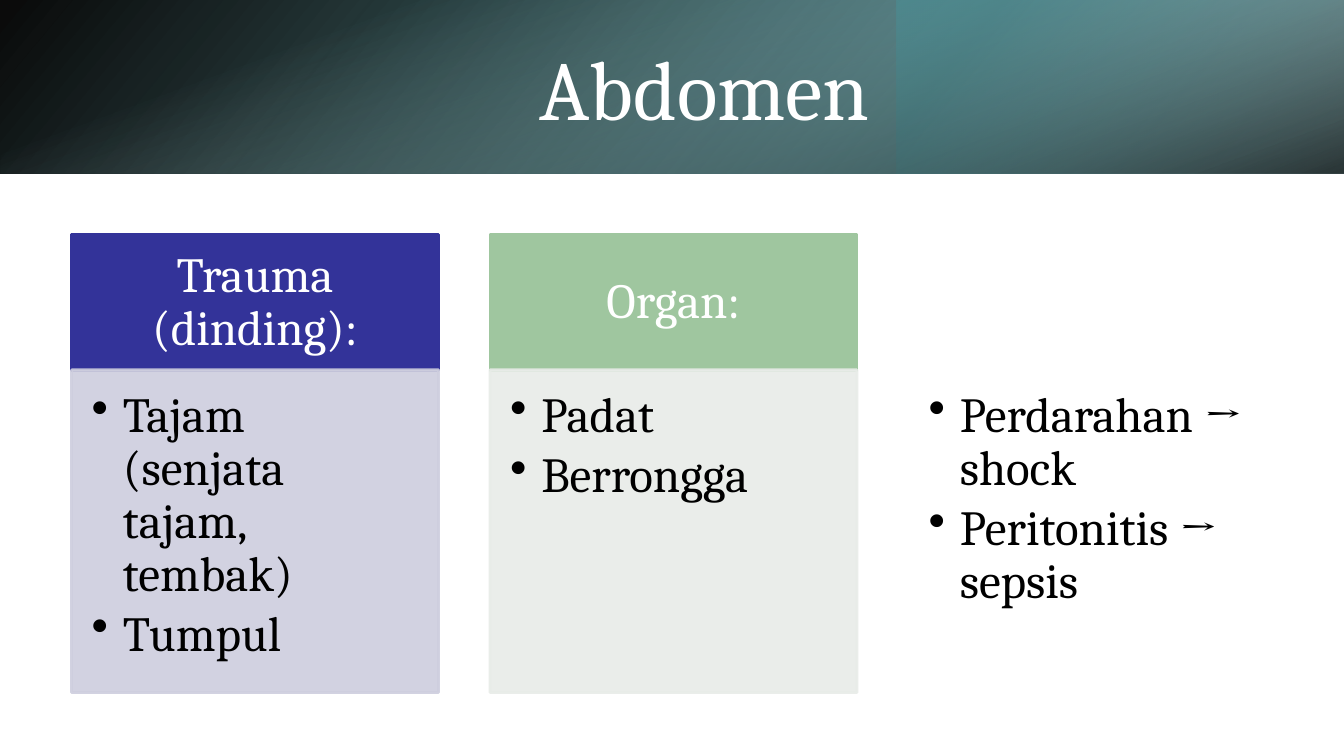
from pptx import Presentation
from pptx.dml.color import RGBColor
from pptx.enum.shapes import MSO_SHAPE
from pptx.enum.text import MSO_ANCHOR as Anchor, PP_ALIGN as Align
from pptx.oxml import parse_xml
from pptx.oxml.ns import nsdecls, qn
from pptx.util import Inches, Pt
from lxml.etree import SubElement

WIDTH, HEIGHT, BANNER = 13.33, 7.5, 1.72


def color(value):
    return RGBColor.from_string(value)


class Deck:
    font = "Cambria"
    size = 35

    def __init__(self):
        self.prs = Presentation()
        self.prs.slide_width, self.prs.slide_height = Inches(WIDTH), Inches(HEIGHT)
        self.slide = self.prs.slides.add_slide(self.prs.slide_layouts[6])

    def rect(self, *box):
        panel = self.slide.shapes.add_shape(MSO_SHAPE.RECTANGLE, *map(Inches, box))
        panel.shadow.inherit = False
        return panel

    def gradient(self, box, stops, angle, rotation=0, flip=False):
        band = self.rect(*box)
        band.line.fill.background()
        band.rotation = rotation
        props = band.fill._xPr
        if flip:
            props.find(qn("a:xfrm")).set("flipH", "1")
        gs = "".join(
            f'<a:gs pos="{pos * 1000}"><a:srgbClr val="{rgb}">'
            f'<a:alpha val="{opacity * 1000}"/></a:srgbClr></a:gs>'
            for pos, rgb, opacity in stops)
        props.find(qn("a:prstGeom")).addnext(parse_xml(
            f'<a:gradFill {nsdecls("a")} rotWithShape="1"><a:gsLst>{gs}</a:gsLst>'
            f'<a:lin ang="{angle * 60000}" scaled="0"/></a:gradFill>'))

    def panel(self, box, rgb, opacity=100):
        panel = self.rect(*box)
        panel.fill.solid()
        panel.fill.fore_color.rgb = color(rgb)
        panel.line.color.rgb = color(rgb)
        panel.line.width = Pt(2)
        if opacity < 100:
            for tint in panel.fill._xPr.iter(qn("a:srgbClr")):
                SubElement(tint, qn("a:alpha")).set("val", str(opacity * 1000))
        return panel

    def put_text(self, shape, lines, rgb, insets, anchor, align, size=size,
                 spacing=None, after=0, bullets=False):
        frame = shape.text_frame
        frame.word_wrap = True
        frame.vertical_anchor = anchor
        (frame.margin_left, frame.margin_top,
         frame.margin_right, frame.margin_bottom) = map(Inches, insets)
        frame.text = "\n".join(lines)
        for para in frame.paragraphs:
            para.alignment, para.line_spacing = align, spacing
            para.space_after = Pt(after)
            for run in para.runs:
                run.font.name, run.font.size = self.font, Pt(size)
                run.font.color.rgb = color(rgb)
            if bullets:
                props = para._p.get_or_add_pPr()
                props.set("marL", str(Inches(0.31)))
                props.set("indent", str(-Inches(0.31)))
                SubElement(props, qn("a:buChar")).set("char", "•")

    def title(self, text, box):
        heading = self.slide.shapes.add_textbox(*map(Inches, box))
        self.put_text(heading, [text], "FFFFFF", (0.1, 0.05, 0.1, 0.05),
                      Anchor.MIDDLE, Align.CENTER, size=60)

    def column(self, left, heading, items, head_rgb, body_rgb):
        width, top, head_height = 3.64, 2.33, 1.35
        if heading:
            head = self.panel((left, top, width, head_height), head_rgb)
            self.put_text(head, [heading], "FFFFFF", (0.27, 0.16, 0.27, 0.16),
                          Anchor.MIDDLE, Align.CENTER, spacing=0.9, after=12)
        body = self.panel((left, 3.67, width, 3.2), body_rgb, opacity=90)
        self.put_text(body, items, "000000", (0.2, 0.2, 0.27, 0.31),
                      Anchor.TOP, Align.LEFT, spacing=0.9, after=5, bullets=True)


def main():
    deck = Deck()

    # Banner: three layered gradients
    deck.gradient((0, 0, WIDTH, BANNER),
                  [(0, "000000", 96), (100, "72BFC5", 100)], 140, flip=True)
    deck.gradient((8.89, 0, 4.44, BANNER),
                  [(19, "3C8C93", 68), (100, "BBE0E3", 79)], 320, 180, flip=True)
    offset = (WIDTH - BANNER) / 2
    deck.gradient((offset, -offset, BANNER, WIDTH),
                  [(23, "BBE0E3", 0), (99, "000000", 74)], 340, 90)
    deck.title("Abdomen", (1.5, 0.38, 10.98, 0.96))

    # Columns: injury, organ, consequence
    columns = [
        ("Trauma (dinding):", ["Tajam (senjata tajam, tembak)", "Tumpul"], "333399", "CECEDE"),
        ("Organ:", ["Padat", "Berrongga"], "9FC69F", "E8ECE8"),
        (None, ["Perdarahan → shock", "Peritonitis → sepsis"], None, "FFFFFF"),
    ]
    for index, content in enumerate(columns):
        deck.column(0.71 + 4.15 * index, *content)

    deck.prs.save("out.pptx")


if __name__ == "__main__":
    main()
